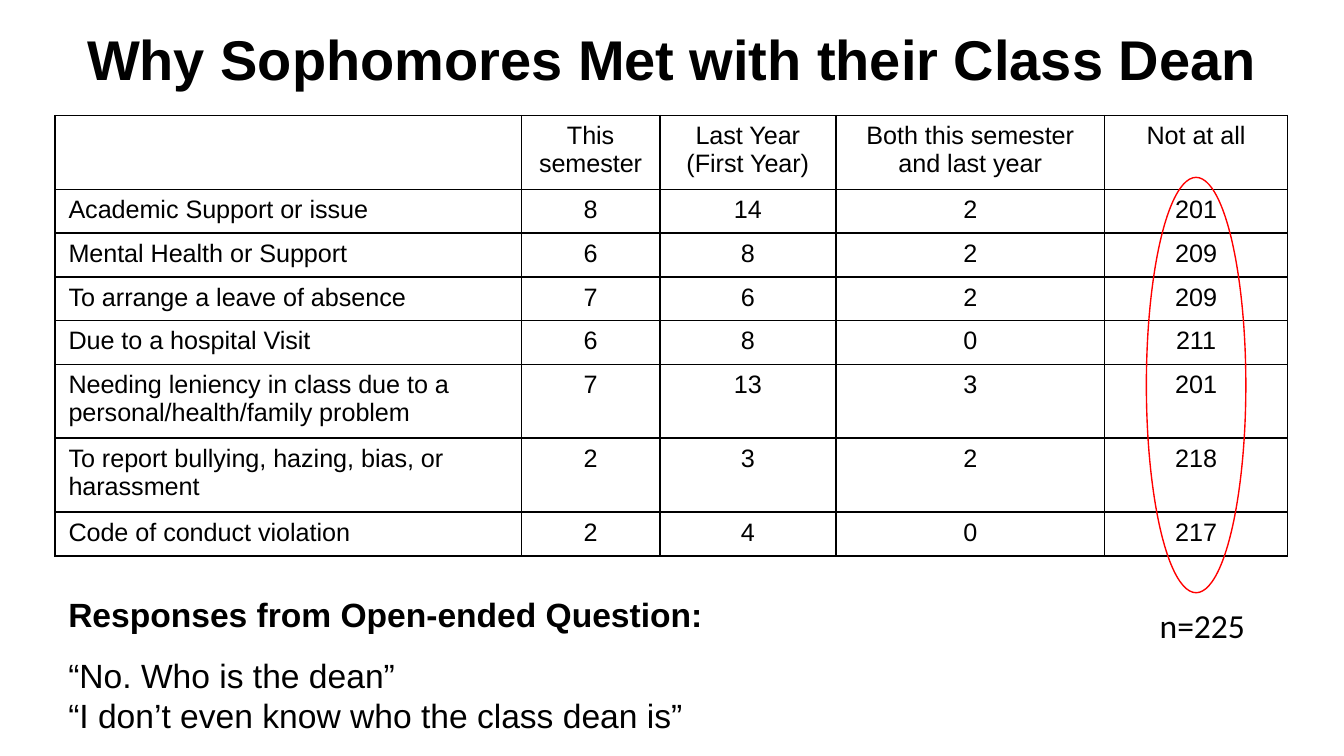
from lxml import etree
from pptx import Presentation
from pptx.dml.color import RGBColor
from pptx.enum.shapes import MSO_SHAPE
from pptx.enum.text import MSO_ANCHOR, PP_ALIGN
from pptx.oxml.ns import qn
from pptx.util import Inches, Pt

LEFT, CENTER = PP_ALIGN.LEFT, PP_ALIGN.CENTER
TOP, MIDDLE = MSO_ANCHOR.TOP, MSO_ANCHOR.MIDDLE
OVAL = MSO_SHAPE.OVAL

COLORS = {"ink": "000000", "mark": "FF0000"}

# Row heights are minimums: each row grows to fit its text
WIDTHS = [3.47, 1.03, 1.31, 2, 1.36]
HEIGHTS = [0.28, 0.17, 0.17, 0.17, 0.17, 0.28, 0.19, 0.17]
ROWS = [
    ["", "This semester", "Last Year (First Year)",
     "Both this semester and last year", "Not at all"],
    ["Academic Support or issue", 8, 14, 2, 201],
    ["Mental Health or Support", 6, 8, 2, 209],
    ["To arrange a leave of absence", 7, 6, 2, 209],
    ["Due to a hospital Visit", 6, 8, 0, 211],
    ["Needing leniency in class due to a personal/health/family problem",
     7, 13, 3, 201],
    ["To report bullying, hazing, bias, or harassment", 2, 3, 2, 218],
    ["Code of conduct violation", 2, 4, 0, 217],
]


def write(para, text, size=18, font="Arial", bold=False, align=LEFT,
          spacing=1.0):
    para.alignment = align
    para.line_spacing = spacing
    run = para.add_run()
    run.text = text
    run.font.size = Pt(size)
    run.font.name = font
    run.font.bold = bold
    run.font.color.rgb = RGBColor.from_string(COLORS["ink"])


def add_box(slide, x, y, w, h, anchor=TOP, inset=0.05):
    box = slide.shapes.add_textbox(Inches(x), Inches(y), Inches(w), Inches(h))
    frame = box.text_frame
    frame.word_wrap = True
    frame.vertical_anchor = anchor
    frame.margin_top = frame.margin_bottom = Inches(inset)
    return frame


def add_borders(cell):
    props = cell._tc.get_or_add_tcPr()
    for i, side in enumerate(("lnL", "lnR", "lnT", "lnB")):
        line = etree.Element(qn("a:" + side), w=str(Pt(1)))
        fill = etree.SubElement(line, qn("a:solidFill"))
        etree.SubElement(fill, qn("a:srgbClr"), val=COLORS["ink"])
        props.insert(i, line)


def add_grid(slide, x, y, h):
    grid = slide.shapes.add_table(
        len(ROWS), len(WIDTHS), Inches(x), Inches(y),
        Inches(sum(WIDTHS)), Inches(h))
    table = grid.table
    table.first_row = table.horz_banding = False
    for col, width in zip(table.columns, WIDTHS):
        col.width = Inches(width)
    for r, row in enumerate(ROWS):
        table.rows[r].height = Inches(HEIGHTS[r])
        for c, value in enumerate(row):
            cell = table.cell(r, c)
            cell.fill.background()
            add_borders(cell)
            if value != "":
                write(cell.text_frame.paragraphs[0], str(value), size=13.5,
                      align=CENTER if c else LEFT)
    grid.height = Inches(h)


def add_ring(slide, x, y, w, h):
    ring = slide.shapes.add_shape(OVAL, Inches(x), Inches(y),
                                  Inches(w), Inches(h))
    ring.shadow.inherit = False
    ring.fill.background()
    ring.line.color.rgb = RGBColor.from_string(COLORS["mark"])
    ring.line.width = Pt(0.75)


def main():
    # Widescreen 16:9
    deck = Presentation()
    deck.slide_width = Inches(10)
    deck.slide_height = Inches(10 * 9 / 16)
    slide = deck.slides.add_slide(deck.slide_layouts[6])

    # Title
    title = add_box(slide, 0.34, 0.12, 9.32, 0.63, anchor=MIDDLE)
    write(title.paragraphs[0], "Why Sophomores Met with their Class Dean",
          size=30, bold=True, align=CENTER)

    # Table of reasons
    add_grid(slide, 0.41, 0.86, 3.28)

    # Open-ended responses
    quotes = add_box(slide, 0.41, 4.22, 9.17, 1.01)
    write(quotes.paragraphs[0], "Responses from Open-ended Question:",
          bold=True, spacing=1.5)
    write(quotes.add_paragraph(), "“No. Who is the dean”", spacing=1.5)
    write(quotes.add_paragraph(), "“I don’t even know who the class dean is”")

    # Ring around the last column, with sample size
    add_ring(slide, 8.53, 1.32, 0.74, 3.09)
    count = add_box(slide, 8.53, 4.4, 0.95, 0.34, inset=0.1)
    write(count.paragraphs[0], "n=225", font="Calibri")

    deck.save("out.pptx")


if __name__ == "__main__":
    main()
